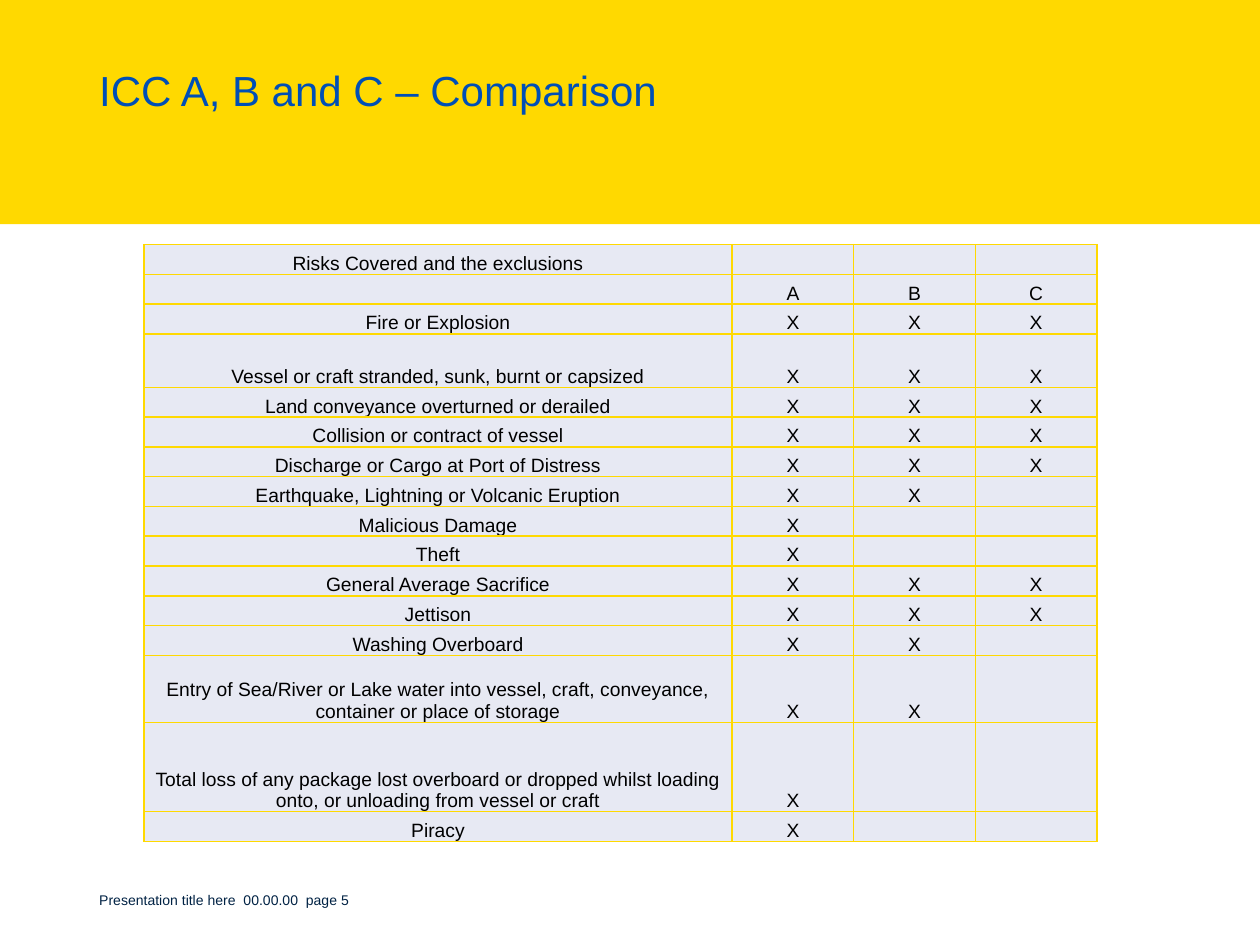
from dataclasses import dataclass

from lxml.etree import SubElement
from pptx import Presentation
from pptx.dml.color import RGBColor
from pptx.enum.shapes import MSO_SHAPE as Shape
from pptx.enum.text import MSO_ANCHOR as Anchor, PP_ALIGN as Align
from pptx.oxml.ns import qn
from pptx.util import Cm, Pt

YELLOW = RGBColor(0xFF, 0xD9, 0x00)
BLUE = RGBColor(0x00, 0x4F, 0xB6)
NAVY = RGBColor(0x00, 0x22, 0x44)
BLACK = RGBColor(0x00, 0x00, 0x00)
PALE = RGBColor(0xE7, 0xE9, 0xF3)
FONT = "Arial"
CLAUSES = "ABC"
WIDTHS = [11.86, 2.45, 2.45, 2.45]
CELL_SIZE = 11


@dataclass
class Risk:
    name: str
    cover: str
    height: float = 0.6

    def cells(self) -> list[str]:
        return [self.name] + ["X" if c in self.cover else "" for c in CLAUSES]


@dataclass
class Label:
    text: str
    left: float
    top: float
    width: float
    height: float
    size: int
    color: RGBColor


RISKS = [
    Risk("Fire or Explosion", "ABC"),
    Risk("Vessel or craft stranded, sunk, burnt or capsized", "ABC", 1.08),
    Risk("Land conveyance overturned or derailed", "ABC"),
    Risk("Collision or contract of vessel", "ABC"),
    Risk("Discharge or Cargo at Port of Distress", "ABC"),
    Risk("Earthquake, Lightning or Volcanic Eruption", "AB"),
    Risk("Malicious Damage", "A"),
    Risk("Theft", "A"),
    Risk("General Average Sacrifice", "ABC"),
    Risk("Jettison", "ABC"),
    Risk("Washing Overboard", "AB"),
    Risk("Entry of Sea/River or Lake water into vessel, craft, conveyance, "
         "container or place of storage", "AB", 1.35),
    Risk("Total loss of any package lost overboard or dropped whilst loading "
         "onto, or unloading from vessel or craft", "A", 1.8),
    Risk("Piracy", "A"),
]
TITLE = Label("ICC A, B and C – Comparison", 2, 1.32, 19.1, 3.1, 24, BLUE)
FOOTER = Label("Presentation title here  00.00.00  page 5",
               2, 17.98, 21.41, 0.71, 8, NAVY)


def style(para, size: int, color: RGBColor) -> None:
    for run in para.runs:
        run.font.name = FONT
        run.font.size = Pt(size)
        run.font.color.rgb = color


def add_band(slide) -> None:
    band = slide.shapes.add_shape(Shape.RECTANGLE, 0, 0, Cm(25.4), Cm(4.52))
    band.shadow.inherit = False
    band.fill.solid()
    band.fill.fore_color.rgb = YELLOW
    band.line.fill.background()


def add_label(slide, label: Label):
    box = slide.shapes.add_textbox(Cm(label.left), Cm(label.top),
                                   Cm(label.width), Cm(label.height))
    frame = box.text_frame
    frame.word_wrap = True
    frame.margin_left = frame.margin_right = 0
    frame.margin_top = frame.margin_bottom = 0
    frame.text = label.text
    para = frame.paragraphs[0]
    style(para, label.size, label.color)
    return para


def add_edges(cell) -> None:
    """Draw yellow borders; they must come before the fill in the XML."""
    props = cell._tc.get_or_add_tcPr()
    for side in ("a:lnL", "a:lnR", "a:lnT", "a:lnB"):
        line = SubElement(props, qn(side), w=str(Pt(1)))
        fill = SubElement(line, qn("a:solidFill"))
        SubElement(fill, qn("a:srgbClr"), val=str(YELLOW))


def fill_cell(cell, text: str) -> None:
    add_edges(cell)
    cell.fill.solid()
    cell.fill.fore_color.rgb = PALE
    cell.vertical_anchor = Anchor.BOTTOM
    cell.margin_left = cell.margin_right = cell.margin_top = Cm(0.03)
    cell.margin_bottom = 0
    para = cell.text_frame.paragraphs[0]
    para.alignment = Align.CENTER
    if text:
        para.text = text
        style(para, CELL_SIZE, BLACK)
    else:
        # An empty cell needs a small end mark to keep its row low.
        SubElement(para._p, qn("a:endParaRPr"), sz=str(CELL_SIZE * 100))


def add_grid(slide) -> None:
    rows = [["Risks Covered and the exclusions", "", "", ""], ["", *CLAUSES]]
    rows += [risk.cells() for risk in RISKS]
    highs = [0.6, 0.6] + [risk.height for risk in RISKS]
    table = slide.shapes.add_table(len(rows), len(WIDTHS), Cm(2.9), Cm(4.93),
                                   Cm(sum(WIDTHS)), Cm(sum(highs))).table
    table.first_row = table.horz_banding = False
    for col, width in zip(table.columns, WIDTHS):
        col.width = Cm(width)
    for row, high, texts in zip(table.rows, highs, rows):
        row.height = Cm(high)
        for cell, text in zip(row.cells, texts):
            fill_cell(cell, text)


def main() -> None:
    deck = Presentation()
    deck.slide_width, deck.slide_height = Cm(25.4), Cm(19.05)
    slide = deck.slides.add_slide(deck.slide_layouts[6])
    add_band(slide)
    add_label(slide, TITLE).line_spacing = Pt(28)
    add_label(slide, FOOTER)
    add_grid(slide)
    deck.save("out.pptx")


if __name__ == "__main__":
    main()
